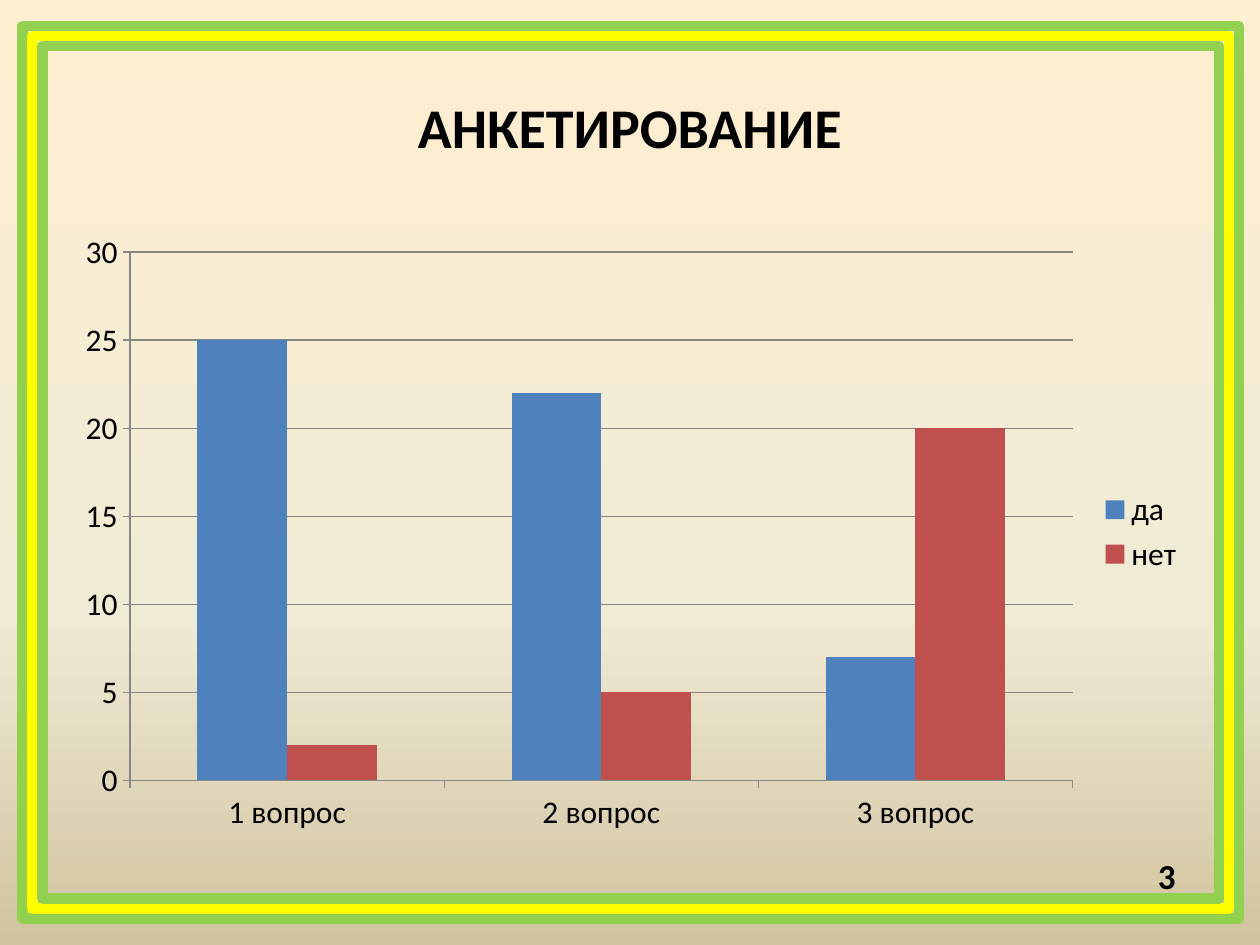
from copy import deepcopy

from pptx import Presentation
from pptx import util as u
from pptx.chart import data
from pptx.dml import color
from pptx.enum import chart as charts, shapes, text
from pptx.oxml import ns

Pt = u.Pt
COLORS = {
    "sky": "FFEFD1", "sand": "F0EBD5", "earth": "D1C39F",
    "green": "92D050", "yellow": "FFFF00", "ink": "000000",
    "grid": "878787", "yes": "4F81BD", "no": "C0504D",
}


def rgb(name):
    return color.RGBColor.from_string(COLORS[name])


class SlideBuilder:
    face = "Calibri"

    def __init__(self, slide):
        self.slide = slide

    def style(self, font, size, bold=False):
        font.name, font.size, font.bold = self.face, Pt(size), bold
        font.color.rgb = rgb("ink")

    def background(self, stops):
        fill = self.slide.background.fill
        fill.gradient()
        fill.gradient_angle = 270
        stop_list = self.slide.element.find(".//" + ns.qn("a:gsLst"))
        stop_list.append(deepcopy(stop_list[-1]))
        for stop, (position, name) in zip(fill.gradient_stops, stops):
            stop.position = position
            stop.color.rgb = rgb(name)

    def frame(self, left, top, width, height, name):
        border = self.slide.shapes.add_shape(
            shapes.MSO_SHAPE.RECTANGLE, Pt(left), Pt(top), Pt(width), Pt(height))
        border.shadow.inherit = False
        border.fill.background()
        border.line.color.rgb = rgb(name)
        border.line.width = Pt(6)

    def title(self, words, left, top, width, height):
        heading = self.slide.shapes.title
        heading.left, heading.top = Pt(left), Pt(top)
        heading.width, heading.height = Pt(width), Pt(height)
        heading.text_frame.text = words
        heading.text_frame.vertical_anchor = text.MSO_ANCHOR.TOP
        line = heading.text_frame.paragraphs[0]
        line.alignment = text.PP_ALIGN.CENTER
        self.style(line.font, 32, bold=True)

    def label(self, words, left, top, width, height):
        frame = self.slide.shapes.add_textbox(
            Pt(left), Pt(top), Pt(width), Pt(height)).text_frame
        frame.word_wrap = True
        frame.text = words
        self.style(frame.paragraphs[0].font, 20, bold=True)

    def columns(self, categories, answers, left, top, width, height):
        survey = data.CategoryChartData()
        survey.categories = categories
        for name, values, _ in answers:
            survey.add_series(name, values)
        chart = self.slide.shapes.add_chart(
            charts.XL_CHART_TYPE.COLUMN_CLUSTERED,
            Pt(left), Pt(top), Pt(width), Pt(height), survey).chart
        self.style(chart.font, 18)
        chart.has_title = False
        chart.has_legend = True
        chart.legend.position = charts.XL_LEGEND_POSITION.RIGHT
        chart.legend.include_in_layout = False

        plot = chart.plots[0]
        plot.gap_width, plot.overlap = 150, 0
        plot.vary_by_categories = False
        for series, (_, _, name) in zip(plot.series, answers):
            series.format.fill.solid()
            series.format.fill.fore_color.rgb = rgb(name)

        scale = chart.value_axis
        scale.minimum_scale, scale.maximum_scale, scale.major_unit = 0, 30, 5
        scale.has_major_gridlines = True
        for axis in (chart.category_axis, scale):
            axis.major_tick_mark = charts.XL_TICK_MARK.OUTSIDE
        for ruled in (chart.category_axis, scale, scale.major_gridlines):
            ruled.format.line.color.rgb = rgb("grid")
            ruled.format.line.width = Pt(0.75)


def main():
    deck = Presentation()
    deck.slide_width, deck.slide_height = Pt(720), Pt(540)
    page = SlideBuilder(deck.slides.add_slide(deck.slide_layouts[5]))

    # Background and nested border
    page.background([(0, "sky"), (0.65, "sand"), (1, "earth")])
    for level, name in enumerate(("green", "yellow", "green")):
        inset = 5.7 * level
        page.frame(13 + inset, 15 + inset, 695 - 2 * inset, 510 - 2 * inset, name)

    # Title
    page.title("АНКЕТИРОВАНИЕ", 36, 49, 648, 63)

    # Survey results
    page.columns(
        ["1 вопрос", "2 вопрос", "3 вопрос"],
        [("да", (25, 22, 7), "yes"), ("нет", (2, 5, 20), "no")],
        36, 126, 648, 356)

    # Page number
    page.label("3", 654.5, 485, 29.5, 28)

    deck.save("out.pptx")


if __name__ == "__main__":
    main()
